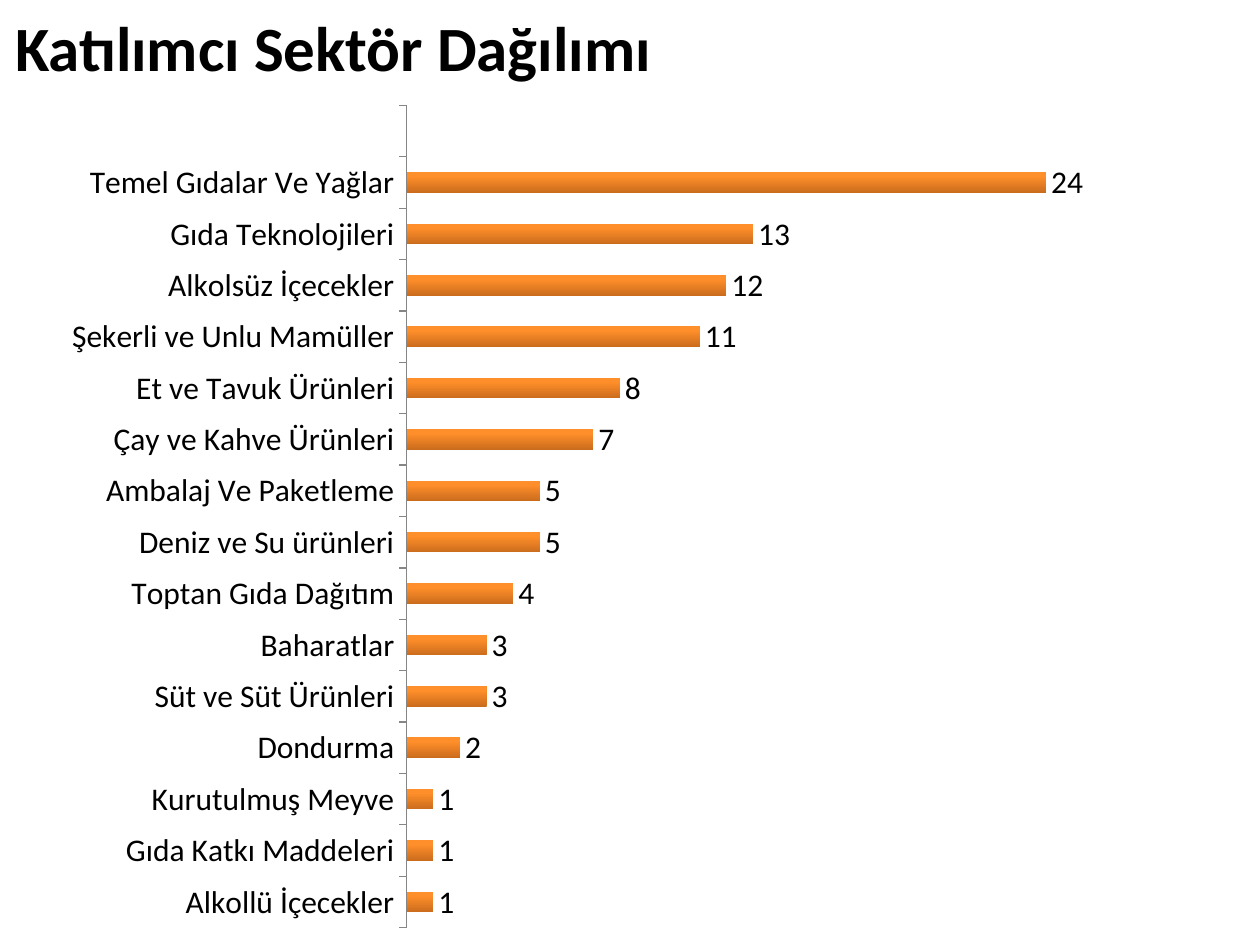
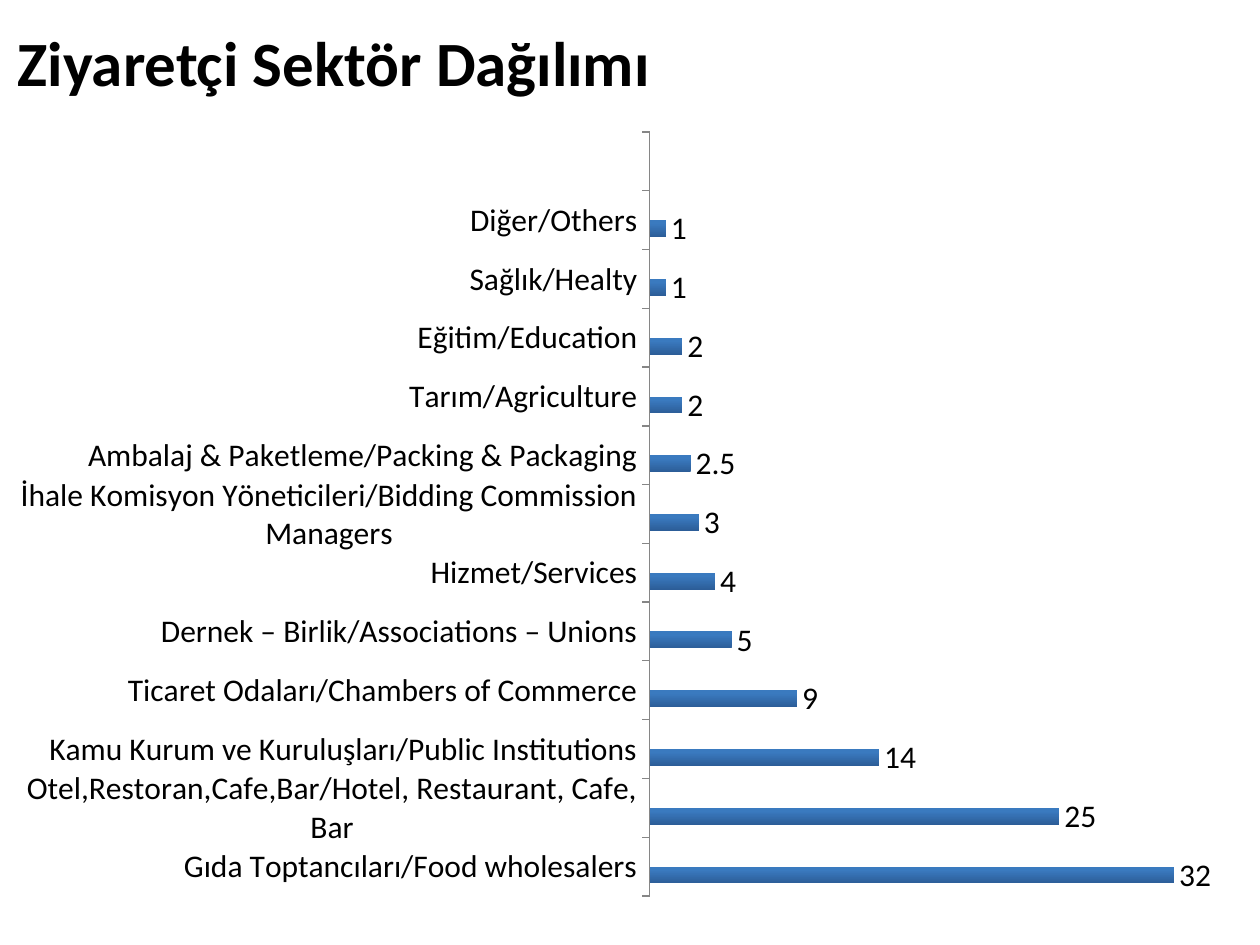
from lxml import etree
from pptx import Presentation
from pptx.chart.data import CategoryChartData
from pptx.dml.color import RGBColor
from pptx.enum.chart import XL_CHART_TYPE, XL_LABEL_POSITION, XL_TICK_MARK
from pptx.enum.text import MSO_ANCHOR, MSO_AUTO_SIZE, PP_ALIGN
from pptx.oxml.ns import qn
from pptx.util import Cm, Pt

BARS = XL_CHART_TYPE.BAR_CLUSTERED
OUTSIDE_END = XL_LABEL_POSITION.OUTSIDE_END
TICK_OUT, TICK_NONE = XL_TICK_MARK.OUTSIDE, XL_TICK_MARK.NONE
MIDDLE, LEFT, FIXED = MSO_ANCHOR.MIDDLE, PP_ALIGN.LEFT, MSO_AUTO_SIZE.NONE

FONT = "Calibri"
BLACK, AXIS_GREY = "000000", "868686"
ORANGE = ("CB6C1D", "FF8F2A")
BLUE = ("2C5D98", "3A7ABF")
TITLE_ONLY = 5

EXHIBITORS = [
    ("Alkollü İçecekler", 1),
    ("Gıda Katkı Maddeleri", 1),
    ("Kurutulmuş Meyve", 1),
    ("Dondurma", 2),
    ("Süt ve Süt Ürünleri", 3),
    ("Baharatlar", 3),
    ("Toptan Gıda Dağıtım", 4),
    ("Deniz ve Su ürünleri", 5),
    ("Ambalaj Ve Paketleme", 5),
    ("Çay ve Kahve Ürünleri", 7),
    ("Et ve Tavuk Ürünleri", 8),
    ("Şekerli ve Unlu Mamüller", 11),
    ("Alkolsüz İçecekler", 12),
    ("Gıda Teknolojileri", 13),
    ("Temel Gıdalar Ve Yağlar", 24),
    ("", None),
]
VISITORS = [
    ("Gıda Toptancıları/Food wholesalers", 32),
    ("Otel,Restoran,Cafe,Bar/Hotel, Restaurant, Cafe, Bar", 25),
    ("Kamu Kurum ve Kuruluşları/Public Institutions", 14),
    ("Ticaret Odaları/Chambers of Commerce", 9),
    ("Dernek – Birlik/Associations – Unions", 5),
    ("Hizmet/Services", 4),
    ("İhale Komisyon Yöneticileri/Bidding Commission Managers", 3),
    ("Ambalaj & Paketleme/Packing & Packaging", 2.5),
    ("Tarım/Agriculture", 2),
    ("Eğitim/Education", 2),
    ("Sağlık/Healty", 1),
    ("Diğer/Others", 1),
    ("", None),
]


def rgb(hex_colour):
    """Turn a hex string into a colour."""
    return RGBColor.from_string(hex_colour)


def style_font(font, size, bold=False):
    """Apply the shared typeface and text colour."""
    font.name, font.size, font.bold = FONT, Pt(size), bold
    font.color.rgb = rgb(BLACK)


def add_heading(slide, box, wording):
    """Fill the title placeholder inside the given box."""
    heading = slide.shapes.title
    heading.left, heading.top, heading.width, heading.height = map(Cm, box)
    frame = heading.text_frame
    frame.word_wrap, frame.auto_size = False, FIXED
    frame.vertical_anchor = MIDDLE
    line = frame.paragraphs[0]
    line.alignment = LEFT
    run = line.add_run()
    run.text = wording
    style_font(run.font, 36, bold=True)


def place_plot(chart, plot_box):
    """Fix the inner plot area as fractions of the chart."""
    plot_area = chart._chartSpace.chart.plotArea
    for old_layout in plot_area.findall(qn("c:layout")):
        plot_area.remove(old_layout)
    layout = etree.Element(qn("c:layout"))
    manual = etree.SubElement(layout, qn("c:manualLayout"))
    settings = [("layoutTarget", "inner"), ("xMode", "edge"), ("yMode", "edge")]
    settings += zip("xywh", plot_box)
    for tag, value in settings:
        etree.SubElement(manual, qn(f"c:{tag}")).set("val", str(value))
    plot_area.insert(0, layout)


def style_axes(chart, maximum):
    """Show only the category axis and scale the hidden value axis."""
    sectors, counts = chart.category_axis, chart.value_axis
    sectors.major_tick_mark, sectors.minor_tick_mark = TICK_OUT, TICK_NONE
    sectors.has_major_gridlines = False
    sectors.format.line.color.rgb = rgb(AXIS_GREY)
    sectors.format.line.width = Pt(0.75)
    counts.visible = counts.has_major_gridlines = False
    counts.minimum_scale, counts.maximum_scale = 0, maximum


def style_bars(plot, gradient):
    """Shade the bars from bottom to top and label them."""
    plot.gap_width, plot.vary_by_categories = 150, False
    plot.has_data_labels = True
    labels = plot.data_labels
    labels.show_value, labels.position = True, OUTSIDE_END
    style_font(labels.font, 18)
    for series in plot.series:
        series.invert_if_negative = False
        fill = series.format.fill
        fill.gradient()
        fill.gradient_angle = 90
        for stop, colour, position in zip(fill.gradient_stops, gradient, (0, 0.8)):
            stop.color.rgb, stop.position = rgb(colour), position


def add_sector_chart(slide, box, sectors, gradient, maximum, plot_box, spare_series):
    """Draw the sector bars inside the given box."""
    names, counts = zip(*sectors)
    data = CategoryChartData()
    data.categories = names
    data.add_series("Series 1", counts)
    if spare_series:
        data.add_series("Series 2", [None] * len(names))
    chart = slide.shapes.add_chart(BARS, *map(Cm, box), data).chart
    chart.has_legend = chart.has_title = False
    style_font(chart.font, 18)
    style_axes(chart, maximum)
    style_bars(chart.plots[0], gradient)
    place_plot(chart, plot_box)


def add_sector_slide(deck, heading, heading_box, chart_box, sectors, gradient,
                     maximum, plot_box, spare_series=False):
    """Add one slide with a heading and its sector chart."""
    slide = deck.slides.add_slide(deck.slide_layouts[TITLE_ONLY])
    add_heading(slide, heading_box, heading)
    add_sector_chart(slide, chart_box, sectors, gradient, maximum, plot_box,
                     spare_series)


def main():
    """Build both sector slides and save the deck."""
    deck = Presentation()
    deck.slide_width, deck.slide_height = Cm(25.4), Cm(19.05)
    add_sector_slide(
        deck, "Katılımcı Sektör Dağılımı", (0.05, 0.08, 20.5, 1.7),
        (1.09, 1.78, 23.7, 17.27), EXHIBITORS, ORANGE, 30,
        (0.3, 0.02, 0.68, 0.96))
    add_sector_slide(
        deck, "Ziyaretçi Sektör Dağılımı", (0.1, 0.33, 13.39, 1.8),
        (0.3, 2.34, 24.61, 16.21), VISITORS, BLUE, 35,
        (0.52, 0.02, 0.47, 0.95), spare_series=True)
    deck.save("out.pptx")


if __name__ == "__main__":
    main()
